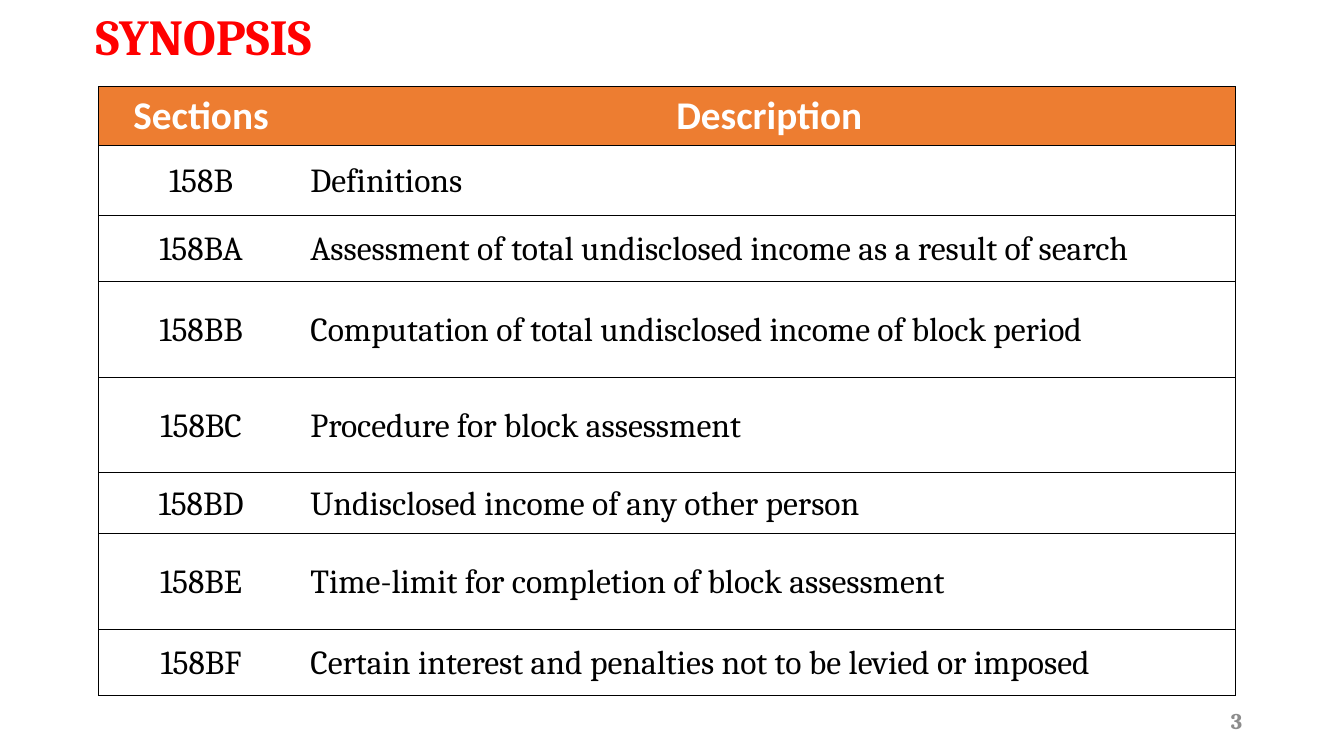
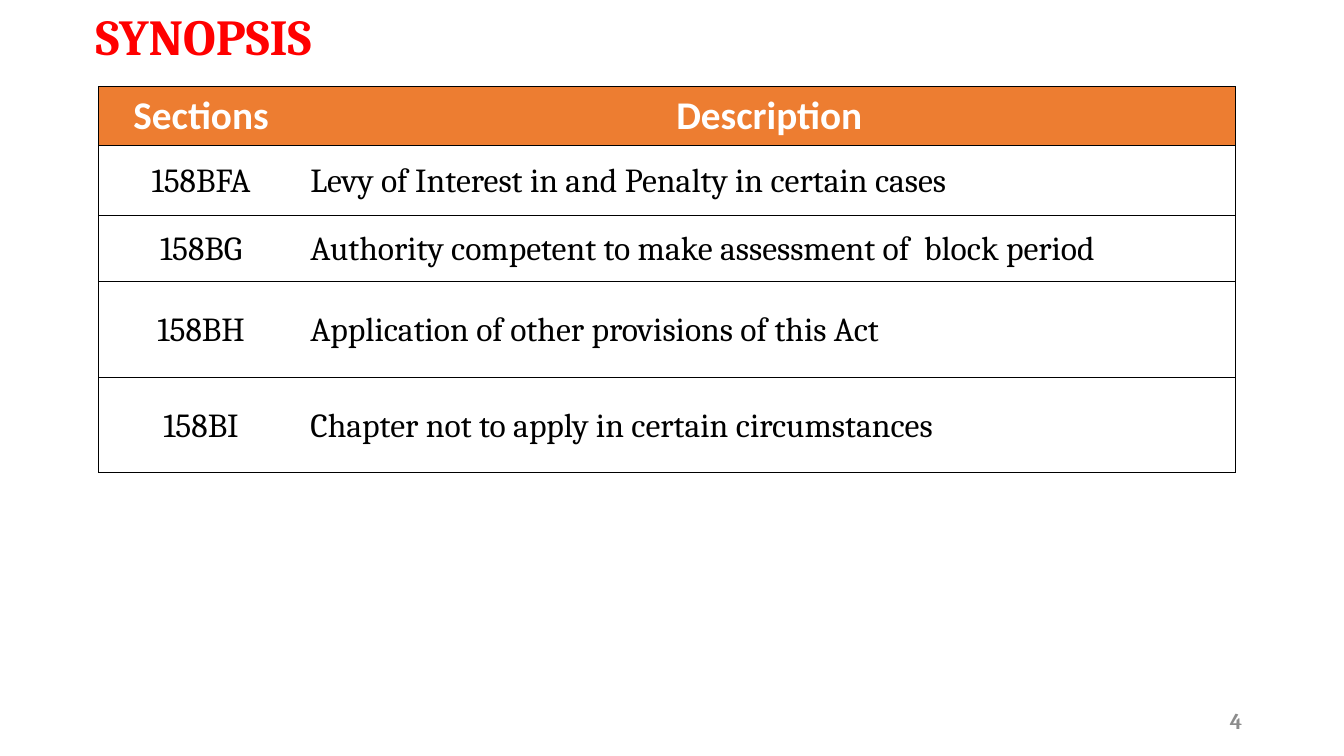
from lxml import etree
from pptx import Presentation
from pptx import util as u
from pptx.dml.color import RGBColor
from pptx.enum import text
from pptx.oxml.ns import qn

WIDTH, HEIGHT = 13.33, 7.5
RED, ORANGE, WHITE, BLACK, GREY = "FF0000", "ED7D31", "FFFFFF", "000000", "8C8C8C"
SERIF, SANS = "Cambria", "Calibri"
LEFT, CENTER, RIGHT = text.PP_ALIGN.LEFT, text.PP_ALIGN.CENTER, text.PP_ALIGN.RIGHT
TOP, MIDDLE = text.MSO_ANCHOR.TOP, text.MSO_ANCHOR.MIDDLE

TITLE_BOX = (0.85, 0, 11.65, 0.71)
TABLE_BOX = (0.98, 0.86, 11.27)
NUMBER_BOX = (9.42, 6.95, 3, 0.4)
COLUMN_SHARES = (0.18, 0.82)
ROW_HEIGHTS = (0.58, 0.7, 0.65, 0.95, 0.95, 0.6, 0.95, 0.66)

HEADINGS = ("Sections", "Description")
SYNOPSES = {
    3: [
        ("158B", "Definitions"),
        ("158BA", "Assessment of total undisclosed income as a result of search"),
        ("158BB", "Computation of total undisclosed income of block period"),
        ("158BC", "Procedure for block assessment"),
        ("158BD", "Undisclosed income of any other person"),
        ("158BE", "Time-limit for completion of block assessment"),
        ("158BF", "Certain interest and penalties not to be levied or imposed"),
    ],
    4: [
        ("158BFA", "Levy of Interest in and Penalty in certain cases"),
        ("158BG", "Authority competent to make assessment of  block period"),
        ("158BH", "Application of other provisions of this Act"),
        ("158BI", "Chapter not to apply in certain circumstances"),
    ],
}


def rgb(value):
    return RGBColor.from_string(value)


def write(tf, words, size, font, color, bold, align):
    p = tf.paragraphs[0]
    p.alignment = align
    r = p.add_run()
    r.text = words
    r.font.size = u.Pt(size)
    r.font.name = font
    r.font.bold = bold
    r.font.color.rgb = rgb(color)
    return p


def add_label(s, box, words, size, color, align, anchor):
    tf = s.shapes.add_textbox(*map(u.Inches, box)).text_frame
    tf.word_wrap = True
    tf.vertical_anchor = anchor
    write(tf, words, size, SERIF, color, True, align)


def set_borders(cell, drawn):
    tc_pr = cell._tc.get_or_add_tcPr()
    for i, side in enumerate("LRTB"):
        ln = etree.Element(qn(f"a:ln{side}"), w=str(u.Pt(0.5)))
        if side in drawn:
            fill = etree.SubElement(ln, qn("a:solidFill"))
            etree.SubElement(fill, qn("a:srgbClr"), val=BLACK)
        else:
            etree.SubElement(ln, qn("a:noFill"))
        tc_pr.insert(i, ln)


def fill_heading(cell, words):
    cell.fill.solid()
    cell.fill.fore_color.rgb = rgb(ORANGE)
    write(cell.text_frame, words, 28, SANS, WHITE, True, CENTER)


def fill_entry(cell, words, align):
    cell.fill.background()
    cell.margin_left = cell.margin_right = u.Inches(0.07)
    cell.margin_top = cell.margin_bottom = 0
    p = write(cell.text_frame, words, 24, SERIF, BLACK, False, align)
    p.line_spacing = 1.07


def add_sections_table(s, box, entries):
    left, top, width = box
    rows = [HEADINGS, *entries]
    heights = ROW_HEIGHTS[:len(rows)]
    frame = s.shapes.add_table(len(rows), len(HEADINGS),
                               *map(u.Inches, (left, top, width, sum(heights))))
    table = frame.table
    table.first_row = table.horz_banding = False
    for column, share in zip(table.columns, COLUMN_SHARES):
        column.width = u.Inches(width * share)
    for i, (row, height) in enumerate(zip(rows, heights)):
        table.rows[i].height = u.Inches(height)
        for j, (words, align, edge) in enumerate(zip(row, (CENTER, LEFT), "LR")):
            cell = table.cell(i, j)
            cell.vertical_anchor = MIDDLE
            if i == 0:
                fill_heading(cell, words)
            else:
                fill_entry(cell, words, align)
            set_borders(cell, edge + "TB")


def add_synopsis_slide(prs, number, entries):
    s = prs.slides.add_slide(prs.slide_layouts[6])
    add_sections_table(s, TABLE_BOX, entries)
    add_label(s, TITLE_BOX, "SYNOPSIS", 36, RED, LEFT, TOP)
    add_label(s, NUMBER_BOX, str(number), 16, GREY, RIGHT, MIDDLE)


def main():
    prs = Presentation()
    prs.slide_width, prs.slide_height = u.Inches(WIDTH), u.Inches(HEIGHT)
    for number, entries in SYNOPSES.items():
        add_synopsis_slide(prs, number, entries)
    prs.save("out.pptx")


if __name__ == "__main__":
    main()
